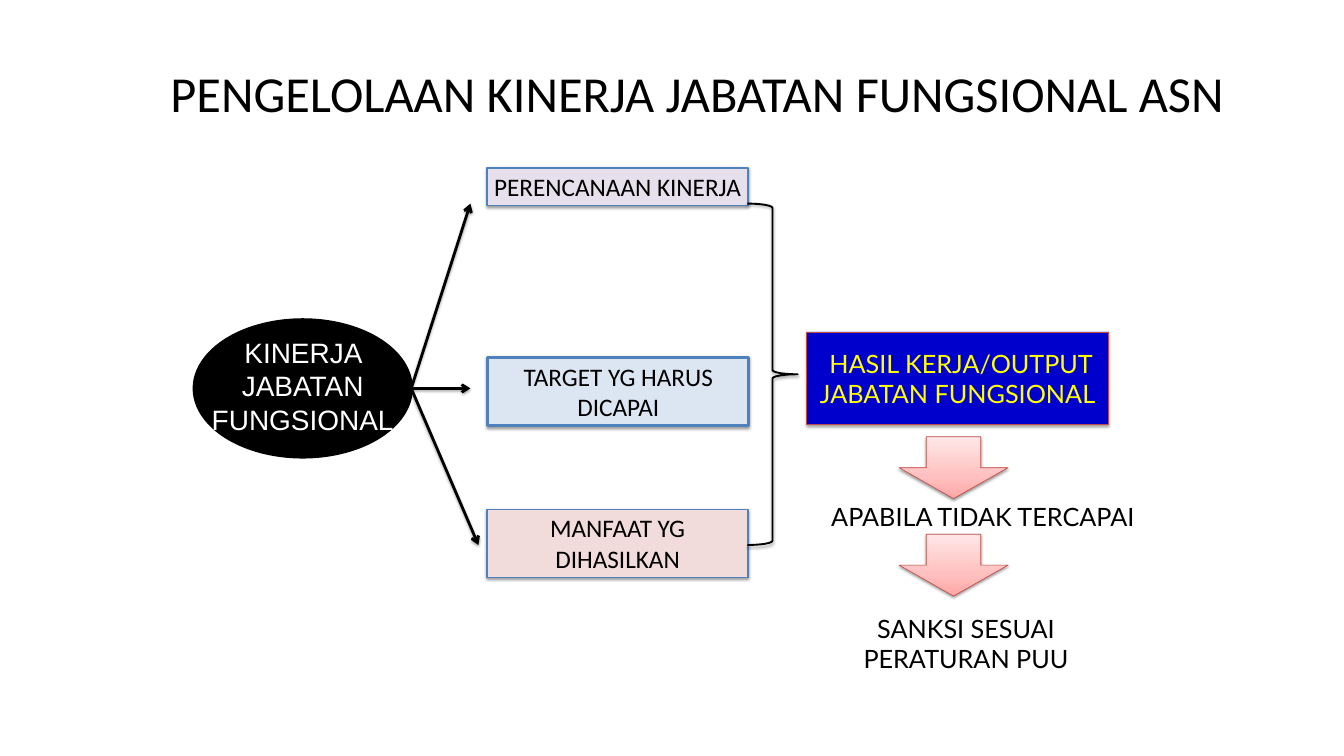
from lxml import etree
from pptx import Presentation
from pptx.dml.color import RGBColor
from pptx.enum.shapes import MSO_CONNECTOR, MSO_SHAPE
from pptx.enum.text import MSO_ANCHOR, PP_ALIGN
from pptx.oxml.ns import qn
from pptx.util import Inches, Pt

STRAIGHT = MSO_CONNECTOR.STRAIGHT
OVAL, BOX = MSO_SHAPE.OVAL, MSO_SHAPE.RECTANGLE
BRACE, DOWN_ARROW = MSO_SHAPE.RIGHT_BRACE, MSO_SHAPE.DOWN_ARROW
TOP, MIDDLE = MSO_ANCHOR.TOP, MSO_ANCHOR.MIDDLE
CENTER = PP_ALIGN.CENTER

COLORS = {
    "black": "000000", "white": "FFFFFF", "yellow": "FFFF00",
    "royal": "0000CC", "red": "BF4C48", "blue": "4F81BD",
    "lilac": "E6E0EC", "sky": "DCE6F2", "rose": "F2DCDB",
    "pink_dark": "FFA6A5", "pink": "FFC0BF", "pink_light": "FFE7E7",
}
SOFT = dict(alpha=38, distance=1.6)
LIGHT = dict(alpha=35, distance=1.8)


def rgb(name):
    return RGBColor.from_string(COLORS[name])


def write(shape, text, size=27, font="Calibri", color="black", anchor=TOP):
    frame = shape.text_frame
    frame.word_wrap = True
    frame.vertical_anchor = anchor
    paragraph = frame.paragraphs[0]
    paragraph.alignment = CENTER
    run = paragraph.add_run()
    run.text = text
    run.font.size = Pt(size)
    run.font.name = font
    run.font.color.rgb = rgb(color)


def add_color(parent, name):
    return etree.SubElement(parent, qn("a:srgbClr"), val=COLORS[name])


class Diagram:
    """Draws the diagram's elements on one slide in a shared style."""

    def __init__(self, slide):
        self.shapes = slide.shapes

    def shadow(self, item, alpha, distance):
        properties = item._element.spPr
        for old in properties.findall(qn("a:effectLst")):
            properties.remove(old)
        effects = etree.SubElement(properties, qn("a:effectLst"))
        outer = etree.SubElement(
            effects, qn("a:outerShdw"), blurRad=str(Pt(3.1)),
            dist=str(Pt(distance)), dir="5400000", rotWithShape="0")
        etree.SubElement(add_color(outer, "black"), qn("a:alpha"), val=str(alpha * 1000))

    def shape(self, kind, at, fill=None, line="black", weight=2, shadow=None):
        item = self.shapes.add_shape(kind, *map(Inches, at))
        item.shadow.inherit = False
        if fill:
            item.fill.solid()
            item.fill.fore_color.rgb = rgb(fill)
        else:
            item.fill.background()
        item.line.color.rgb = rgb(line)
        item.line.width = Pt(weight)
        if shadow:
            self.shadow(item, **shadow)
        return item

    def label(self, at, text, **style):
        write(self.shapes.add_textbox(*map(Inches, at)), text, **style)

    def arrow(self, start, end):
        link = self.shapes.add_connector(STRAIGHT, *map(Inches, start + end))
        link.line.color.rgb = rgb("black")
        link.line.width = Pt(3)
        etree.SubElement(link.line._get_or_add_ln(), qn("a:tailEnd"), type="arrow")
        self.shadow(link, **LIGHT)

    def block_arrow(self, at):
        item = self.shape(DOWN_ARROW, at, "pink", "red", 0.75, SOFT)
        item.fill.gradient()
        gradient = item._element.spPr.find(qn("a:gradFill"))
        stops = gradient.find(qn("a:gsLst"))
        for stop in list(stops):
            stops.remove(stop)
        for percent, color in ((0, "pink_dark"), (35, "pink"), (100, "pink_light")):
            add_color(etree.SubElement(stops, qn("a:gs"), pos=str(percent * 1000)), color)
        gradient.find(qn("a:lin")).set("ang", "16200000")


def main():
    deck = Presentation()
    deck.slide_width, deck.slide_height = Inches(20), Inches(11.25)
    diagram = Diagram(deck.slides.add_slide(deck.slide_layouts[6]))

    diagram.shape(OVAL, (2.88, 4.75, 3.25, 2.06), "black")
    diagram.label((2.13, 0.87, 16.5, 0.95), "PENGELOLAAN KINERJA JABATAN FUNGSIONAL ASN",
                  size=54)

    output = diagram.shape(BOX, (12, 4.94, 4.5, 1.38), "royal", "red", 0.75, LIGHT)
    write(output, " HASIL KERJA/OUTPUT JABATAN FUNGSIONAL",
          font="Lato", color="yellow", anchor=MIDDLE)

    stages = (
        ("PERENCANAAN KINERJA", (7.25, 2.5, 3.88, 0.56), "lilac", 1.5),
        ("TARGET YG HARUS DICAPAI", (7.26, 5.32, 3.88, 1.01), "sky", 3),
        ("MANFAAT YG DIHASILKAN", (7.25, 7.58, 3.88, 1.01), "rose", 1.5),
    )
    for text, at, fill, weight in stages:
        write(diagram.shape(BOX, at, fill, "blue", weight, SOFT), text)

    diagram.label((2.88, 4.94, 3.25, 1.62), "KINERJA JABATAN FUNGSIONAL",
                  size=30, font="Arial", color="white")
    for target in ((7, 3.03), (7.12, 8.11), (7, 5.78)):
        diagram.arrow((6.12, 5.78), target)
    diagram.shape(BRACE, (11.12, 3.03, 0.75, 5.08), shadow=SOFT)

    consequences = (
        ("APABILA TIDAK TERCAPAI", 12.25, 7, 6.5),
        ("SANKSI SESUAI PERATURAN PUU", 12, 8.88, 7.95),
    )
    for text, left, top, arrow_top in consequences:
        diagram.label((left, top, 4.75, 1.38), text, font="Lato", anchor=MIDDLE)
        diagram.block_arrow((13.38, arrow_top, 1.62, 0.92))

    deck.save("out.pptx")


if __name__ == "__main__":
    main()
